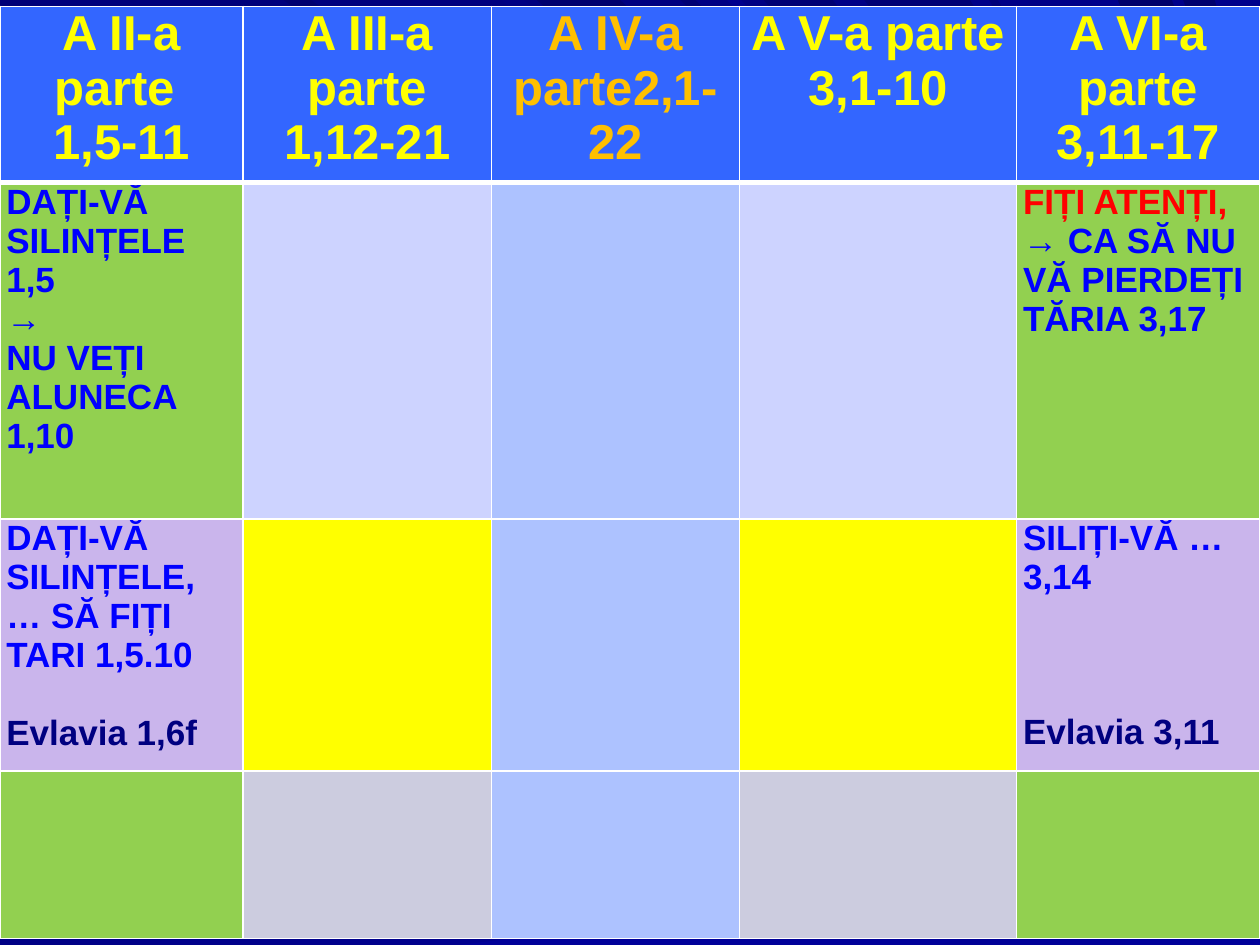
from lxml.etree import SubElement
from pptx import Presentation
from pptx.dml.color import RGBColor
from pptx.enum.text import PP_ALIGN
from pptx.oxml.ns import qn
from pptx.util import Inches, Pt

COLORS = {
    "night": "000078", "navy": "000099", "white": "FFFFFF",
    "header": "3366FF", "green": "92D050", "lilac": "CAB5EC",
    "pale": "CDD3FF", "sky": "ADC2FF", "yellow": "FFFF00", "gray": "CCCCDF",
    "orange": "FFC000", "blue": "0000FF", "red": "FF0000", "dark": "000080",
    "ink 1": "00007B", "ink 2": "000085", "ink 3": "000083", "ink 4": "00006D",
    "ink 5": "000073", "ink 6": "00006B", "ink 7": "000070", "ink 8": "00008E",
    "ink 9": "00008A",
}
RAYS = [
    ([(5.77, 2.98), (1.01, 0), (0.26, 0), (5.63, 3.1), (10, 5.63), (10, 5.62)],
     "ink 1", "navy", 45),
    ([(0, 7.5), (0.54, 7.5), (6.28, 6.97), (6.28, 6.89), (0, 7.35)], "ink 2", "navy", 0),
    ([(7.42, 7.5), (8.01, 7.37), (7.56, 7.02), (3.64, 7.5)], "navy", "navy", 0),
    ([(3.98, 0), (9.44, 4.73), (9.47, 4.69), (4.16, 0)], "ink 3", "navy", 45),
    ([(4.26, 0), (9.51, 4.65), (9.68, 4.49), (4.92, 0)], "ink 4", "navy", 45),
    ([(5.4, 0), (9.77, 4.4), (5.52, 0)], "ink 5", "navy", 45),
    ([(6.06, 0), (9.85, 4.31), (9.87, 4.3), (6.61, 0)], "ink 5", "dark", 90),
    ([(8.87, 0), (9.73, 1.81), (9.86, 1.48), (9.3, 0)], "ink 6", "dark", 90),
    ([(9.64, 0), (9.39, 0), (9.89, 1.38), (9.99, 1.13)], "ink 4", "dark", 90),
    ([(2.25, 0), (9.99, 5.52), (9.99, 5.47), (2.47, 0)], "ink 7", "navy", 45),
    ([(5.77, 0), (9.99, 4.54), (9.99, 4.53), (5.88, 0)], "ink 8", "navy", 45),
    ([(7.7, 0), (6.86, 0), (9.99, 4.28), (9.99, 3.9), (9.98, 3.9)], "ink 5", "dark", 90),
    ([(7.85, 0), (9.99, 3.6), (9.99, 3.54), (7.92, 0)], "night", "navy", 45),
    ([(8.15, 0), (9.99, 3.36), (9.99, 3.35), (8.24, 0)], "ink 2", "navy", 45),
    ([(9.99, 2.49), (8.72, 0), (8.65, 0), (9.99, 2.58)], "ink 9", "navy", 45),
]
COLUMN_WIDTHS = [1.93, 1.97, 1.97, 2.2, 1.93]
ROW_HEIGHTS = [1.4, 2.67, 2, 1.33]
FILLS = [
    ["header"] * 5,
    ["green", "pale", "sky", "pale", "green"],
    ["lilac", "yellow", "sky", "yellow", "lilac"],
    ["green", "gray", "sky", "gray", "green"],
]
HEADERS = [
    (["A II-a parte ", "1,5-11"], "yellow"),
    (["A III-a parte", "1,12-21"], "yellow"),
    (["A IV-a parte2,1-22"], "orange"),
    (["A V-a parte", "3,1-10"], "yellow"),
    (["A VI-a parte", "3,11-17"], "yellow"),
]
NOTES = {
    (1, 0): [("DAȚI-VĂ SILINȚELE 1,5", "blue", 0), ("→", "blue", 0),
             ("NU VEȚI ALUNECA 1,10", "blue", 0)],
    (1, 4): [("FIȚI ATENȚI,", "red", 0),
             ("→ CA SĂ NU VĂ PIERDEȚI TĂRIA 3,17", "blue", 0)],
    (2, 0): [("DAȚI-VĂ SILINȚELE,", "blue", 0), ("… SĂ FIȚI TARI 1,5.10", "blue", 0),
             ("Evlavia 1,6f", "dark", 22)],
    (2, 4): [("SILIȚI-VĂ … 3,14", "blue", 0), ("Evlavia 3,11", "dark", 66)],
}


def color(name):
    return RGBColor.from_string(COLORS[name])


def fill_gradient(fill, names, clockwise_angle):
    fill.gradient()
    fill.gradient_angle = (360 - clockwise_angle) % 360
    for stop, name in zip(fill.gradient_stops, names):
        stop.color.rgb = color(name)


def add_ray(page, points, start, end, angle):
    corners = [(Inches(x), Inches(y)) for x, y in points]
    builder = page.shapes.build_freeform(*corners[0])
    builder.add_line_segments(corners[1:], close=True)
    ray = builder.convert_to_shape()
    ray.shadow.inherit = False
    ray.line.fill.background()
    if start == end:
        ray.fill.solid()
        ray.fill.fore_color.rgb = color(start)
    else:
        fill_gradient(ray.fill, (start, end), angle)


def set_borders(cell, widths):
    properties = cell._tc.get_or_add_tcPr()
    for index, (side, width) in enumerate(widths.items()):
        line = SubElement(properties, qn(f"a:ln{side}"), w=str(Pt(width)))
        fill = SubElement(line, qn("a:solidFill"))
        SubElement(fill, qn("a:srgbClr"), val=COLORS["white"])
        properties.insert(index, line)


def write_cell(cell, lines, size, alignment):
    frame = cell.text_frame
    for index, (text, name, gap) in enumerate(lines):
        para = frame.add_paragraph() if index else frame.paragraphs[0]
        para.alignment = alignment
        if gap:
            para.space_before = Pt(gap)
        span = para.add_run()
        span.text = text
        span.font.name = "Arial"
        span.font.size = Pt(size)
        span.font.bold = True
        span.font.color.rgb = color(name)


def add_grid(page):
    grid = page.shapes.add_table(len(ROW_HEIGHTS), len(COLUMN_WIDTHS), Inches(0),
                                 Inches(0.05), Inches(10), Inches(7.4)).table
    for column, width in zip(grid.columns, COLUMN_WIDTHS):
        column.width = Inches(width)
    for row, height in zip(grid.rows, ROW_HEIGHTS):
        row.height = Inches(height)
    for row, names in enumerate(FILLS):
        for column, name in enumerate(names):
            cell = grid.cell(row, column)
            cell.margin_left = cell.margin_right = Inches(0.05)
            cell.margin_top = cell.margin_bottom = 0
            cell.fill.solid()
            cell.fill.fore_color.rgb = color(name)
            set_borders(cell, {"L": 1, "R": 1, "T": 3 if row == 1 else 1,
                               "B": 3 if row == 0 else 1})
    return grid


def main():
    deck = Presentation()
    deck.slide_width, deck.slide_height = Inches(10), Inches(7.5)
    page = deck.slides.add_slide(deck.slide_layouts[6])
    fill_gradient(page.background.fill, ("night", "navy"), 45)
    for points, start, end, angle in RAYS:
        add_ray(page, points, start, end, angle)
    grid = add_grid(page)
    for column, (texts, name) in enumerate(HEADERS):
        lines = [(text, name, 0) for text in texts]
        write_cell(grid.cell(0, column), lines, 28, PP_ALIGN.CENTER)
    for (row, column), lines in NOTES.items():
        write_cell(grid.cell(row, column), lines, 20, PP_ALIGN.LEFT)
    deck.save("out.pptx")


if __name__ == "__main__":
    main()
